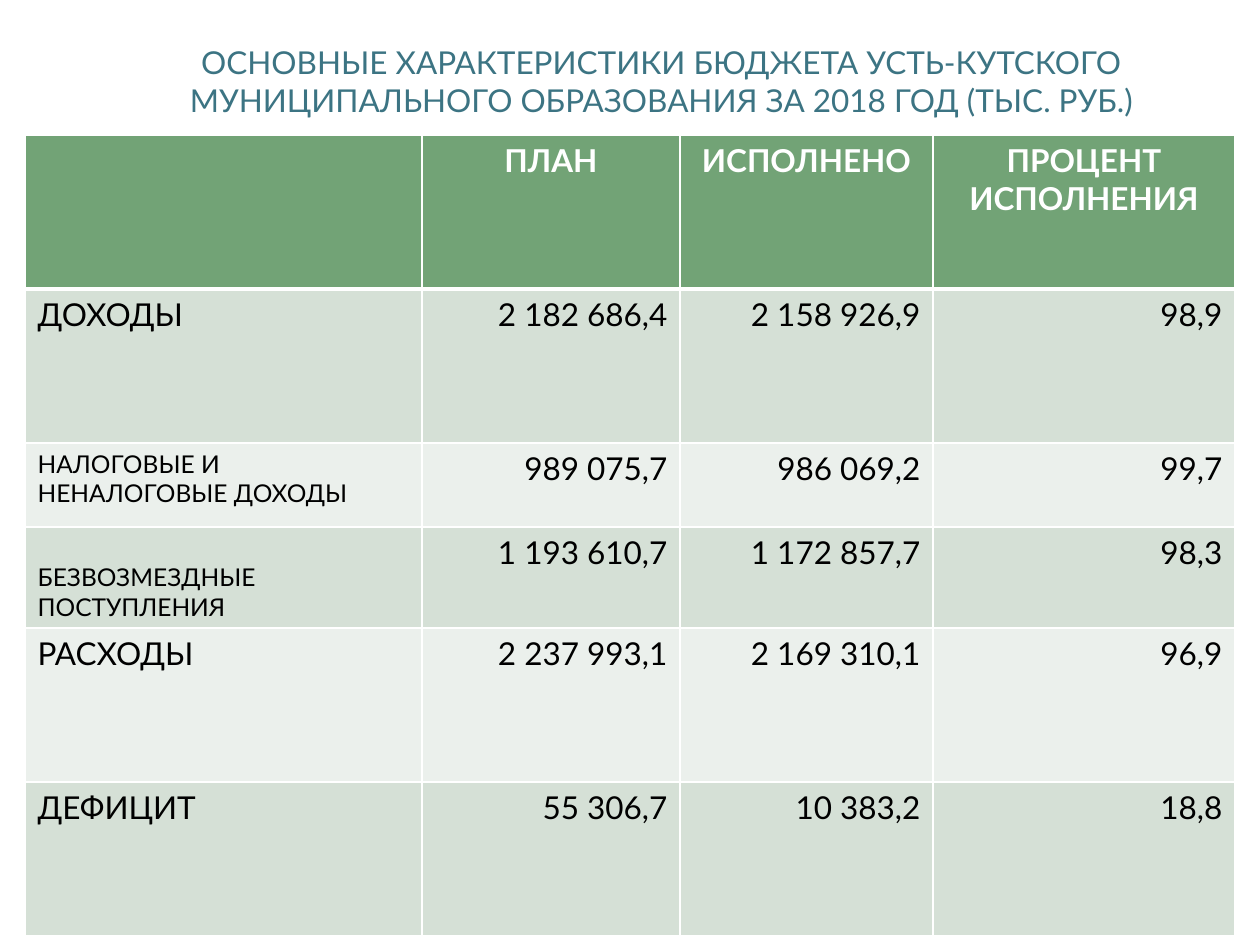
"""Builds the budget summary slide with its title and table."""
from dataclasses import dataclass

from lxml.etree import SubElement
from pptx import Presentation
from pptx.dml.color import RGBColor as Rgb
from pptx.enum.text import MSO_ANCHOR as Anchor, PP_ALIGN as Align
from pptx.oxml.ns import qn
from pptx.util import Emu, Pt


@dataclass(frozen=True)
class Theme:
    font: str = "Lato"
    title: str = "3C7483"
    header: str = "72A376"
    bands: tuple = ("D5E0D6", "EBF0EC")
    light: str = "FFFFFF"
    dark: str = "000000"
    normal: int = 18
    small: int = 14
    thin: int = 1
    thick: int = 3


TITLE = ("ОСНОВНЫЕ ХАРАКТЕРИСТИКИ БЮДЖЕТА УСТЬ-КУТСКОГО "
         "МУНИЦИПАЛЬНОГО ОБРАЗОВАНИЯ ЗА 2018 ГОД (ТЫС. РУБ.)")
BUDGET = [
    ("", "ПЛАН", "ИСПОЛНЕНО", "ПРОЦЕНТ ИСПОЛНЕНИЯ"),
    ("ДОХОДЫ", "2 182 686,4", "2 158 926,9", "98,9"),
    ("НАЛОГОВЫЕ И НЕНАЛОГОВЫЕ ДОХОДЫ", "989 075,7", "986 069,2", "99,7"),
    ("БЕЗВОЗМЕЗДНЫЕ ПОСТУПЛЕНИЯ", "1 193 610,7", "1 172 857,7", "98,3"),
    ("РАСХОДЫ", "2 237 993,1", "2 169 310,1", "96,9"),
    ("ДЕФИЦИТ", "55 306,7", "10 383,2", "18,8"),
]
SUBITEM_ROWS = (2, 3)
LOW_LABEL_ROW = 3
COLUMN_WIDTHS = (397, 258, 253, 302)
ROW_HEIGHTS = (154, 154, 84, 101, 154, 154)


def px(length):
    return Emu(round(length * 914400 / 126))


class SlideBuilder:
    def __init__(self, page, theme):
        self.page = page
        self.theme = theme

    def text(self, frame, text, size, color, align, bold=False):
        frame.text = text
        para = frame.paragraphs[0]
        para.alignment = align
        for span in para.runs:
            span.font.name = self.theme.font
            span.font.size = Pt(size)
            span.font.bold = bold
            span.font.color.rgb = Rgb.from_string(color)

    def title(self, text, left, top, width, height):
        box = self.page.shapes.title
        box.left, box.top, box.width, box.height = map(px, (left, top, width, height))
        box.text_frame.vertical_anchor = Anchor.MIDDLE
        self.text(box.text_frame, text, self.theme.normal, self.theme.title, Align.CENTER)

    def border(self, cell, side, weight):
        line = SubElement(cell._tc.get_or_add_tcPr(), qn(f"a:ln{side}"), w=str(Pt(weight)))
        fill = SubElement(line, qn("a:solidFill"))
        SubElement(fill, qn("a:srgbClr"), val=self.theme.light)

    def cell(self, cell, text, row, column):
        theme = self.theme
        heading, label = row == 0, column == 0
        for side in "LRTB":
            under_heading = (row, side) in ((0, "B"), (1, "T"))
            self.border(cell, side, theme.thick if under_heading else theme.thin)
        cell.fill.solid()
        fill = theme.header if heading else theme.bands[(row - 1) % 2]
        cell.fill.fore_color.rgb = Rgb.from_string(fill)
        align = Align.CENTER if heading else Align.LEFT if label else Align.RIGHT
        size = theme.small if label and row in SUBITEM_ROWS else theme.normal
        color = theme.light if heading else theme.dark
        low = label and row == LOW_LABEL_ROW
        cell.vertical_anchor = Anchor.BOTTOM if low else Anchor.TOP
        self.text(cell.text_frame, text, size, color, align, bold=heading)

    def table(self, records, left, top, widths, heights):
        table = self.page.shapes.add_table(
            len(heights), len(widths), px(left), px(top),
            px(sum(widths)), px(sum(heights))).table
        for column, width in zip(table.columns, widths):
            column.width = px(width)
        for row, height in zip(table.rows, heights):
            row.height = px(height)
        for row, record in enumerate(records):
            for column, text in enumerate(record):
                self.cell(table.cell(row, column), text, row, column)


def main():
    deck = Presentation()
    deck.slide_width, deck.slide_height = px(1260), px(945)
    page = deck.slides.add_slide(deck.slide_layouts[5])
    builder = SlideBuilder(page, Theme())
    builder.title(TITLE, 63, 26, 1197, 110)
    builder.table(BUDGET, 25, 135, COLUMN_WIDTHS, ROW_HEIGHTS)
    deck.save("out.pptx")


if __name__ == "__main__":
    main()
